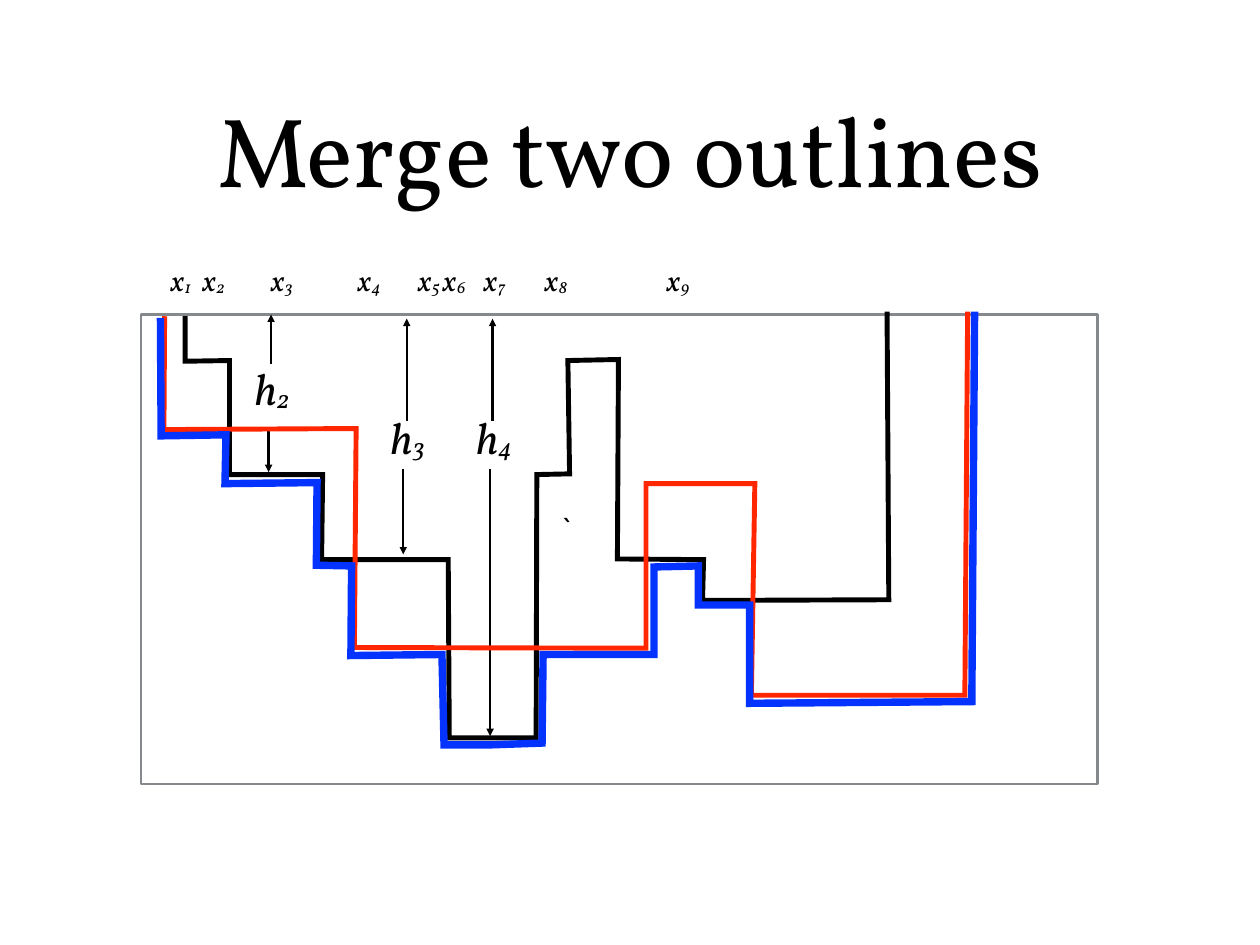
from dataclasses import dataclass

from lxml.etree import SubElement
from pptx import Presentation
from pptx.dml.color import RGBColor
from pptx.enum.shapes import MSO_CONNECTOR, MSO_SHAPE
from pptx.enum.text import MSO_ANCHOR, PP_ALIGN
from pptx.oxml.ns import qn
from pptx.slide import Slide
from pptx.text.text import TextFrame
from pptx.util import Cm, Pt

BLACK, GREY, RED, BLUE = "000000", "85888D", "FF2600", "0433FF"
SERIF, SANS = "Vollkorn", "Roboto"
INSET = 0.15
SUBSCRIPT_BASELINE = "-6000"

Point = tuple[float, float]


@dataclass(frozen=True)
class Outline:
    color: str
    weight: float
    points: list[Point]
    mark: str = ""


@dataclass(frozen=True)
class HeightMark:
    """A height label with one arrow going up from it and one going down."""
    symbol: str
    left: float
    top: float
    up_x: float
    up_from: float
    up_to: float
    down_x: float
    down_from: float
    down_to: float


FIRST_OUTLINE = Outline(BLACK, 4, [
    (5.31, 9.07), (5.31, 10.36), (6.58, 10.34), (6.58, 13.61), (9.25, 13.61),
    (9.22, 16.05), (12.85, 16.05), (12.88, 21.16), (15.37, 21.16), (15.39, 13.61),
    (16.33, 13.59), (16.28, 10.34), (17.73, 10.31), (17.7, 16.03), (20.17, 16.05),
    (20.14, 17.22), (25.48, 17.2), (25.43, 8.94)])
SECOND_OUTLINE = Outline(RED, 4, [
    (4.72, 9.07), (4.7, 12.32), (10.21, 12.29), (10.16, 18.57), (18.52, 18.59),
    (18.52, 13.87), (21.64, 13.87), (21.54, 19.94), (27.66, 19.94), (27.74, 8.94)])
MERGED_OUTLINE = Outline(BLUE, 6, [
    (4.6, 9.12), (4.62, 12.5), (6.48, 12.47), (6.45, 13.87), (9.09, 13.84),
    (9.07, 16.21), (10.08, 16.23), (10.06, 18.8), (12.67, 18.77), (12.73, 21.36),
    (14.12, 21.36), (15.54, 21.31), (15.57, 18.77), (18.75, 18.77), (18.75, 16.26),
    (20.02, 16.23), (20.02, 17.35), (21.49, 17.35), (21.49, 20.17), (27.86, 20.12),
    (27.94, 8.94)], mark="`")

HEIGHT_MARKS = [
    HeightMark("h|3", 11.05, 11.53, 11.66, 12.07, 9.14, 11.56, 13.44, 15.9),
    HeightMark("h|4", 13.51, 11.53, 14.12, 12.07, 9.14, 14.05, 13.44, 21.11),
    HeightMark("h|2", 7.16, 10.13, 7.77, 10.44, 9.02, 7.7, 12.24, 13.54),
]
# Distances of x2 to x9 from x1
X_OFFSETS = [0.91, 2.87, 5.36, 7.09, 7.8, 8.97, 10.72, 14.22]


def rgb(color: str) -> RGBColor:
    return RGBColor.from_string(color)


def write(frame: TextFrame, text: str, *, size: float, font: str = SERIF,
          italic: bool = False, align: PP_ALIGN = PP_ALIGN.LEFT,
          wrap: bool = True, tabs: tuple[float, ...] = ()) -> None:
    """Fill a frame; every second part of the text between bars is a subscript."""
    frame.word_wrap = wrap
    frame.vertical_anchor = MSO_ANCHOR.MIDDLE
    frame.margin_left = frame.margin_right = Cm(INSET)
    frame.margin_top = frame.margin_bottom = Cm(INSET)
    paragraph = frame.paragraphs[0]
    paragraph.alignment = align
    if tabs:
        tab_list = SubElement(paragraph._p.get_or_add_pPr(), qn("a:tabLst"))
        for position in tabs:
            SubElement(tab_list, qn("a:tab"), pos=str(Cm(position)), algn="l")
    for index, part in enumerate(text.split("|")):
        run = paragraph.add_run()
        run.text = part
        run.font.size = Pt(size)
        run.font.name = font
        run.font.italic = italic
        run.font.color.rgb = rgb(BLACK)
        if index % 2:
            run._r.get_or_add_rPr().set("baseline", SUBSCRIPT_BASELINE)


def add_label(slide: Slide, text: str, left: float, top: float,
              width: float, height: float, **text_format) -> None:
    box = slide.shapes.add_textbox(Cm(left), Cm(top), Cm(width), Cm(height))
    write(box.text_frame, text, **text_format)


def add_frame(slide: Slide) -> None:
    frame = slide.shapes.add_shape(
        MSO_SHAPE.RECTANGLE, Cm(4.04), Cm(9.02), Cm(27.43), Cm(13.46))
    frame.shadow.inherit = False
    frame.fill.background()
    frame.line.color.rgb = rgb(GREY)
    frame.line.width = Pt(2)


def add_outline(slide: Slide, outline: Outline) -> None:
    start, *corners = [(Cm(x), Cm(y)) for x, y in outline.points]
    builder = slide.shapes.build_freeform(*start)
    builder.add_line_segments(corners, close=False)
    shape = builder.convert_to_shape()
    shape.shadow.inherit = False
    shape.fill.background()
    shape.line.color.rgb = rgb(outline.color)
    shape.line.width = Pt(outline.weight)
    SubElement(shape.line._get_or_add_ln(), qn("a:miter"), lim="400000")
    if outline.mark:
        write(shape.text_frame, outline.mark, size=24, font=SANS,
              align=PP_ALIGN.CENTER)


def add_vertical_arrow(slide: Slide, x: float, start: float, end: float) -> None:
    arrow = slide.shapes.add_connector(
        MSO_CONNECTOR.STRAIGHT, Cm(x), Cm(start), Cm(x), Cm(end))
    arrow.line.color.rgb = rgb(BLACK)
    arrow.line.width = Pt(2)
    SubElement(arrow.line._get_or_add_ln(), qn("a:tailEnd"), type="triangle")
    SubElement(arrow._element.spPr, qn("a:effectLst"))


def add_height_mark(slide: Slide, mark: HeightMark) -> None:
    add_label(slide, mark.symbol, mark.left, mark.top, 1.37, 1.98,
              size=36, italic=True, wrap=False)
    add_vertical_arrow(slide, mark.up_x, mark.up_from, mark.up_to)
    add_vertical_arrow(slide, mark.down_x, mark.down_from, mark.down_to)


def main() -> None:
    presentation = Presentation()
    presentation.slide_width = Cm(36.12)
    presentation.slide_height = Cm(27.1)
    slide = presentation.slides.add_slide(presentation.slide_layouts[6])

    add_label(slide, "Merge two outlines", 2.64, 1.24, 30.84, 5.99,
              size=80, align=PP_ALIGN.CENTER)
    add_frame(slide)
    add_outline(slide, FIRST_OUTLINE)
    x_labels = "\t|".join(f"x|{number}" for number in range(1, len(X_OFFSETS) + 2))
    add_label(slide, x_labels, 4.75, 7.32, 25.98, 1.42,
              size=24, italic=True, tabs=tuple(X_OFFSETS))
    for mark in HEIGHT_MARKS:
        add_height_mark(slide, mark)
    add_outline(slide, SECOND_OUTLINE)
    add_outline(slide, MERGED_OUTLINE)

    presentation.save("out.pptx")


if __name__ == "__main__":
    main()
